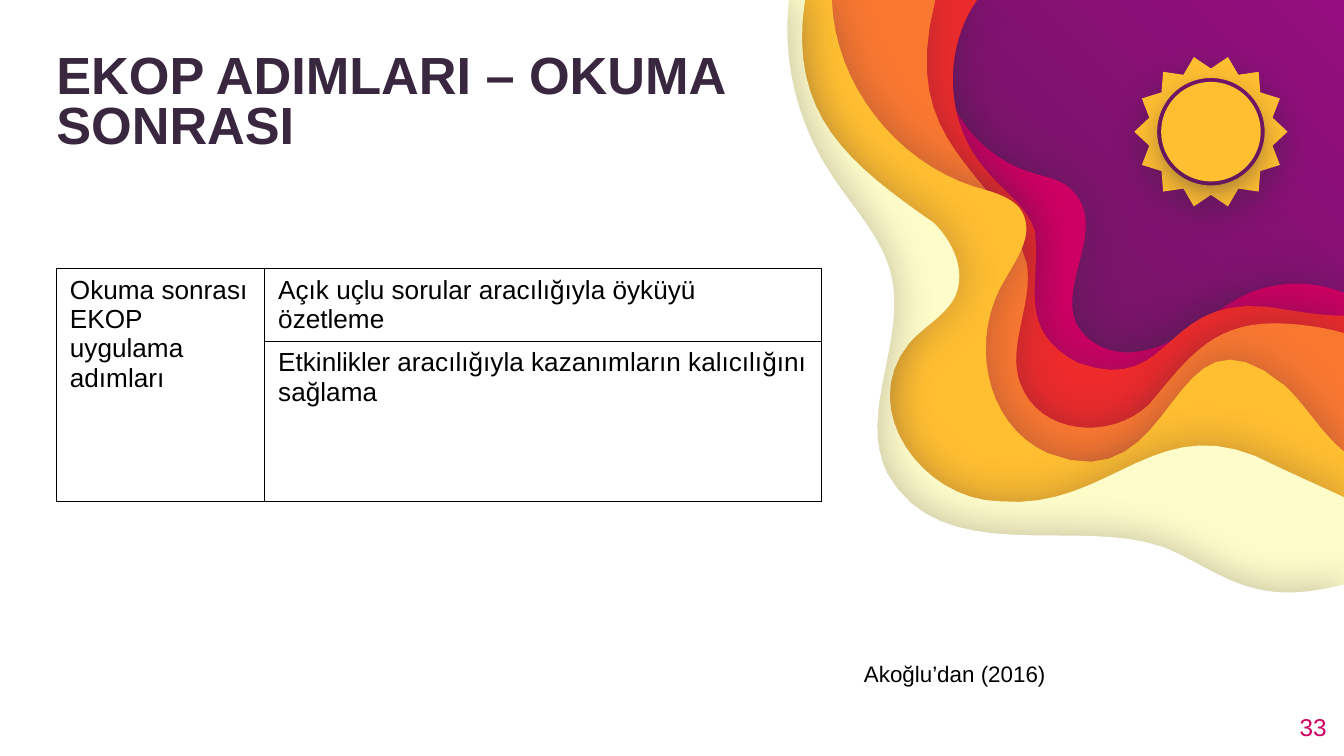
"""Build a slide with layered paper waves, a sun, a title and a table of reading steps."""
import math

import pptx
import pptx.dml.color
import pptx.enum.shapes
import pptx.enum.text
import pptx.oxml
import pptx.oxml.ns
import pptx.util

THEME = {
    "font": "Arial", "ink": "39273F", "black": "000000", "accent": "CE0063",
    "red": "ED2B2B", "orange": "F97830", "yellow": "FFBF31", "cream": "FEFDCA",
    "white": "FFFFFF", "glow": "940D7F", "plum": "5E1B53",
    "title": 28, "table": 14, "source": 12, "number": 13,
}
NS = pptx.oxml.ns.nsdecls("a")
ANCHOR = pptx.enum.text.MSO_ANCHOR
ALIGN = pptx.enum.text.PP_ALIGN

prs = pptx.Presentation()
prs.slide_width = pptx.util.Inches(10)
prs.slide_height = prs.slide_width * 9 // 16
U = prs.slide_width // 10
COLS, ROWS = 10, 10 * 9 / 16

s = prs.slides.add_slide(prs.slide_layouts[5])


def bezier(pts, steps=16):
    """Sample a chain of cubic curves."""
    out = [pts[0]]
    for i in range(0, len(pts) - 3, 3):
        for t in (n / steps for n in range(1, steps + 1)):
            w = ((1 - t) ** 3, 3 * t * (1 - t) ** 2, 3 * t * t * (1 - t), t ** 3)
            out.append(tuple(sum(k * p[a] for k, p in zip(w, pts[i:i + 4])) for a in (0, 1)))
    return out


def style(tf, size, color, bold=False, align=ALIGN.LEFT):
    """Format every run of a text frame."""
    for p in tf.paragraphs:
        p.alignment = align
        for r in p.runs:
            r.font.name, r.font.bold = THEME["font"], bold
            r.font.size = pptx.util.Pt(THEME[size])
            r.font.color.rgb = pptx.dml.color.RGBColor.from_string(THEME[color])


s.background.fill.solid()
solid = s.element.xpath("p:cSld/p:bg/p:bgPr/a:solidFill")[0]
stops = "".join(
    f'<a:gs pos="{pos}000"><a:srgbClr val="{THEME[c]}"/></a:gs>'
    for pos, c in ((0, "glow"), (50, "plum"), (100, "plum")))
solid.getparent().replace(solid, pptx.oxml.parse_xml(
    f'<a:gradFill {NS} rotWithShape="1"><a:gsLst>{stops}</a:gsLst><a:path path="circle">'
    '<a:fillToRect l="100000" b="100000"/></a:path></a:gradFill>'))

waves = [
    ("accent",
     [(9.32, 2.17), (9.02, 2.29), (8.78, 2.59), (8.44, 2.62), (8.27, 2.64), (8.09, 2.56),
      (8.01, 2.41), (7.87, 2.11), (8.25, 1.69), (7.98, 1.42), (7.91, 1.34), (7.79, 1.32),
      (7.69, 1.29), (7.16, 1.14), (6.84, 0.52), (7.04, 0)],
     [(COLS, 2.18), (9.78, 2.09), (9.54, 2.09)]),
    ("red",
     [(9.6, 2.31), (8.61, 2.1), (8.78, 2.97), (8.02, 2.7), (7.55, 2.45), (7.75, 2.12),
      (7.7, 1.72), (7.64, 1.53), (7.46, 1.42), (7.34, 1.27), (7.03, 0.93), (7.01, 0.37),
      (7.27, 0)],
     [(COLS, 2.35), (9.87, 2.35), (9.73, 2.33)]),
    ("orange",
     [(9.59, 2.41), (9.04, 2.37), (8.86, 2.64), (8.55, 3.01), (8.27, 3.28), (7.73, 3.24),
      (7.59, 2.85), (7.49, 2.57), (7.69, 2.26), (7.64, 1.96), (7.43, 1.23), (6.67, 1.12),
      (6.96, 0)],
     [(COLS, 2.48), (9.87, 2.44), (9.73, 2.42)]),
    ("yellow",
     [(9.56, 2.87), (8.67, 2.13), (8.8, 3.78), (7.79, 3.37), (7.31, 3.15), (7.21, 2.49),
      (7.49, 2.06), (7.57, 1.92), (7.68, 1.76), (7.62, 1.61), (7.57, 1.47), (7.39, 1.43),
      (7.25, 1.39), (6.66, 1.2), (6.21, 0.62), (6.19, 0)],
     [(COLS, 3.36), (9.83, 3.22), (9.72, 3.02)]),
    ("cream",
     [(9.5, 3.47), (8.61, 2.98), (8.29, 3.81), (7.43, 3.73), (6.87, 3.72), (6.37, 3.05),
      (6.76, 2.56), (6.87, 2.43), (7.04, 2.35), (7.11, 2.2), (7.19, 2.01), (7.09, 1.8),
      (6.95, 1.66), (6.32, 1.22), (5.86, 0.86), (5.99, 0)],
     [(COLS, 3.7), (9.83, 3.62), (9.67, 3.55)]),
    ("white",
     [(9.27, 4.36), (9.05, 4.29), (8.86, 4.15), (8.65, 4.07), (8, 3.84), (7, 4.24),
      (6.6, 3.52), (6.38, 3.07), (6.75, 2.53), (6.63, 2.04), (6.56, 1.76), (6.34, 1.54),
      (6.18, 1.29), (5.93, 0.91), (5.82, 0.45), (5.87, 0)],
     [(COLS, 4.35), (9.76, 4.41), (9.51, 4.44)]),
]
wave_shadow, sun_shadow = (30, 22.5, 0.8, 0), (50, 15.8, 5.2, 90)
cutouts = []
for color, shore, closing in waves:
    corners = [(0, 0), (0, ROWS), (COLS, ROWS)]
    cutouts.append((color, [bezier(shore) + corners + bezier(closing + shore[:1])], wave_shadow))

sun_x, sun_y, rays, tip, notch, hole, disc = 9.01, 0.98, 14, 0.57, 0.47, 0.4, 0.37
rings = []
for count, radii in ((2 * rays, (notch, tip)), (96, (hole, hole))):
    angles = [2 * math.pi * i / count for i in range(count)]
    rings.append([(sun_x + radii[i % 2] * math.sin(a), sun_y - radii[i % 2] * math.cos(a))
                  for i, a in enumerate(angles)])
cutouts.append(("yellow", rings, sun_shadow))

shapes = []
for color, outlines, shadow in cutouts:
    fb = s.shapes.build_freeform(*(int(v * U) for v in outlines[0][0]))
    for i, outline in enumerate(outlines):
        pts = [(int(x * U), int(y * U)) for x, y in outline]
        if i:
            fb.move_to(*pts[0])
        fb.add_line_segments(pts[1:], close=True)
    shapes.append((fb.convert_to_shape(), color, shadow))
sp = s.shapes.add_shape(pptx.enum.shapes.MSO_SHAPE.OVAL, int((sun_x - disc) * U),
                        int((sun_y - disc) * U), int(2 * disc * U), int(2 * disc * U))
shapes.append((sp, "yellow", sun_shadow))

for sp, color, (alpha, blur, dist, angle) in shapes:
    sp.fill.solid()
    sp.fill.fore_color.rgb = pptx.dml.color.RGBColor.from_string(THEME[color])
    sp.line.fill.background()
    sp.shadow.inherit = False
    sp.element.spPr.find(pptx.oxml.ns.qn("a:effectLst")).append(pptx.oxml.parse_xml(
        f'<a:outerShdw {NS} blurRad="{pptx.util.Pt(blur)}" dist="{pptx.util.Pt(dist)}" '
        f'dir="{angle * 60000}" algn="ctr" rotWithShape="0"><a:srgbClr val="{THEME["ink"]}">'
        f'<a:alpha val="{alpha}000"/></a:srgbClr></a:outerShdw>'))

title = s.shapes.title
title.element.getparent().append(title.element)
title.left, title.top, title.width, title.height = (int(v * U) for v in (0.42, 0.37, 5.7, 0.78))
number = s.shapes.add_textbox(*(int(v * U) for v in (9.27, 5.19, 0.6, 0.43)))
source = s.shapes.add_textbox(*(int(v * U) for v in (6.33, 4.86, 2.94, 0.3)))
for sp, text in ((title, "EKOP ADIMLARI – OKUMA SONRASI"), (number, "33"),
                 (source, "Akoğlu’dan (2016)")):
    sp.text_frame.text = text
    sp.text_frame.word_wrap = True
    sp.text_frame.auto_size = pptx.enum.text.MSO_AUTO_SIZE.NONE
for sp, anchor in ((title, ANCHOR.BOTTOM), (number, ANCHOR.MIDDLE)):
    tf = sp.text_frame
    tf.margin_left = tf.margin_right = tf.margin_top = tf.margin_bottom = 0
    tf.vertical_anchor = anchor
title.text_frame.paragraphs[0].line_spacing = 0.8
style(title.text_frame, "title", "ink", bold=True)
style(number.text_frame, "number", "accent", align=ALIGN.RIGHT)
style(source.text_frame, "source", "black")

widths, heights = (1.55, 4.14), (0.54, 1.19)
frame = s.shapes.add_table(2, 2, int(0.42 * U), 2 * U, int(sum(widths) * U), int(sum(heights) * U))
table = frame.table
table.first_row = table.horz_banding = False
for i, (width, height) in enumerate(zip(widths, heights)):
    table.columns[i].width = int(width * U)
    table.rows[i].height = int(height * U)
table.cell(0, 0).merge(table.cell(1, 0))
table.cell(0, 0).text = "Okuma sonrası EKOP uygulama adımları"
table.cell(0, 1).text = "Açık uçlu sorular aracılığıyla öyküyü özetleme"
table.cell(1, 1).text = "Etkinlikler aracılığıyla kazanımların kalıcılığını sağlama"
for cell in table.iter_cells():
    style(cell.text_frame, "table", "black")
    tcPr = cell._tc.get_or_add_tcPr()
    for side in "LRTB":
        tcPr.append(pptx.oxml.parse_xml(
            f'<a:ln{side} {NS} w="{pptx.util.Pt(0.75)}"><a:solidFill>'
            f'<a:srgbClr val="{THEME["black"]}"/></a:solidFill></a:ln{side}>'))
    cell.fill.background()

prs.save("out.pptx")
